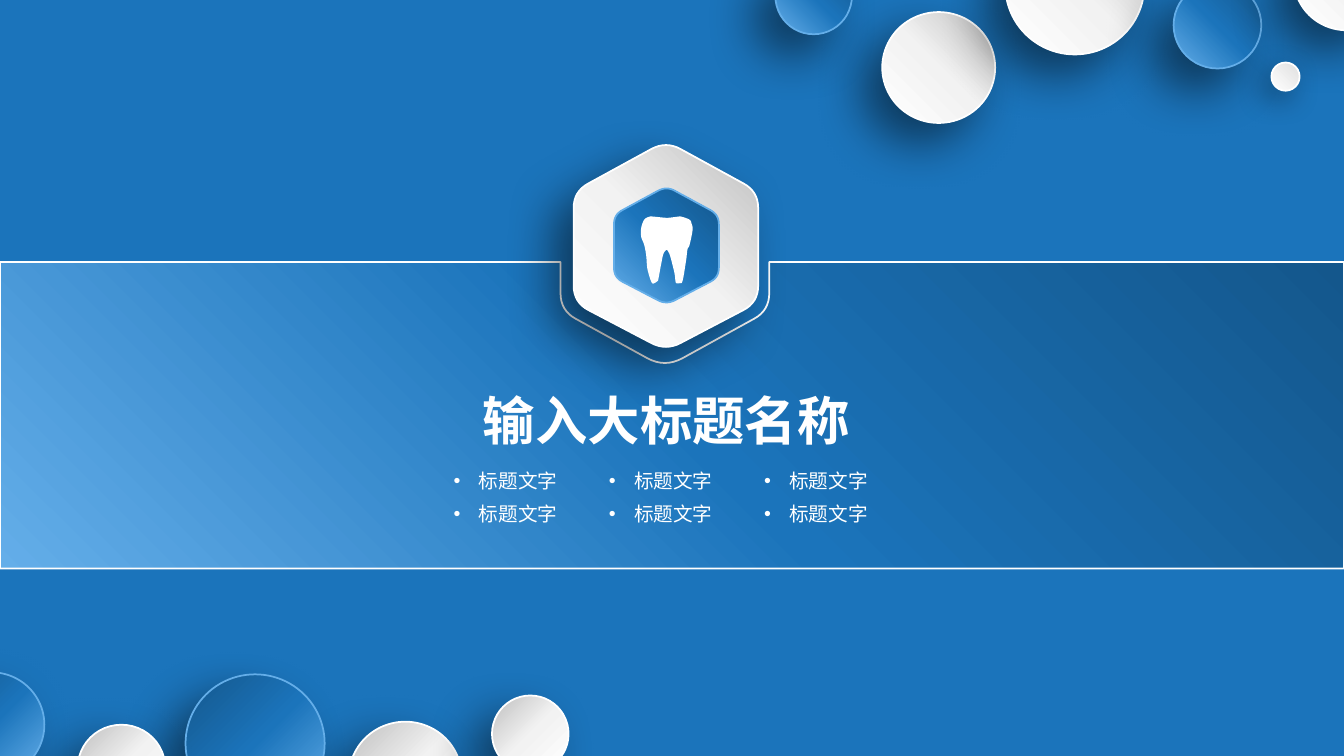
from dataclasses import dataclass

from lxml import etree
from pptx import Presentation
from pptx import util as u
from pptx.dml.color import RGBColor
from pptx.enum import shapes, text
from pptx.oxml import parse_xml
from pptx.oxml.ns import nsdecls, qn


@dataclass(frozen=True)
class Theme:
    font: str = "Arial"
    white: str = "FFFFFF"
    background: str = "1B74BB"
    edge_blue: str = "64AEE9"
    blue: tuple = ("64AEE9", "1B74BB", "14578C")
    silver: tuple = ("FFFFFF", "F2F2F2", "BFBFBF")
    pearl: tuple = ("FFFFFF", "E0E0E0")
    line_width: float = 1.25
    title_size: float = 37.4
    item_size: float = 14


THEME = Theme()
DEEP_SHADOW = (50, 35, 20)  # opacity %, blur pt, distance pt
BLUE_SHADOW = (50, 35, 22)
SMALL_SHADOW = (40, 22, 8)

# style: gradient colours, edge colour, shadow
STYLES = {
    "blue": (THEME.blue, THEME.edge_blue, BLUE_SHADOW),
    "silver": (THEME.silver, THEME.white, DEEP_SHADOW),
    "pearl": (THEME.pearl, THEME.white, SMALL_SHADOW),
    "band": (THEME.blue, THEME.white, None),
    "badge": (THEME.blue, THEME.edge_blue, None),
}

# Tooth outline, in inches from its top left corner
TOOTH = [
    (0.52, 0.13), (0.49, 0.28), (0.47, 0.32), (0.46, 0.40), (0.45, 0.47),
    (0.42, 0.64), (0.39, 0.66), (0.36, 0.66), (0.35, 0.64), (0.34, 0.56),
    (0.30, 0.40), (0.28, 0.35), (0.26, 0.33), (0.23, 0.37), (0.21, 0.46),
    (0.18, 0.62), (0.17, 0.64), (0.14, 0.66), (0.12, 0.66), (0.10, 0.62),
    (0.07, 0.51), (0.06, 0.39), (0.04, 0.28), (0.01, 0.20), (0.01, 0.11),
    (0.04, 0.03), (0.09, 0.00), (0.14, 0.00), (0.24, 0.01), (0.29, 0.01),
    (0.37, 0.00), (0.41, 0.00), (0.49, 0.03), (0.51, 0.07),
]


# ---- Geometry ----
def mix(start, end, t):
    return tuple(a + (b - a) * t for a, b in zip(start, end))


def round_corners(corners, steps=8):
    """Turn (x, y, setback) corners into an outline with rounded corners."""
    outline = []
    for i, (x, y, setback) in enumerate(corners):
        if not setback:
            outline.append((x, y))
            continue
        ends = []
        for near in (corners[i - 1], corners[(i + 1) % len(corners)]):
            length = ((near[0] - x) ** 2 + (near[1] - y) ** 2) ** 0.5
            ends.append(mix((x, y), near[:2], setback / length))
        for k in range(steps + 1):
            t = k / steps
            outline.append(mix(mix(ends[0], (x, y), t), mix((x, y), ends[1], t), t))
    return outline


def smooth(points, steps=4):
    """Closed Catmull-Rom curve through the points."""
    outline, count = [], len(points)
    for i in range(count):
        a, b, c, d = (points[(i + k) % count] for k in (-1, 0, 1, 2))
        for k in range(steps):
            t = k / steps
            outline.append(tuple(
                0.5 * (2 * q + (r - p) * t + (2 * p - 5 * q + 4 * r - s) * t ** 2
                       + (3 * q - p - 3 * r + s) * t ** 3)
                for p, q, r, s in zip(a, b, c, d)))
    return outline


def hexagon(left, top, width, height):
    setback = 0.09 * width
    relative = [(0.5, -0.02), (1, 0.23), (1, 0.78), (0.5, 1.02), (0, 0.78), (0, 0.23)]
    return round_corners([(left + x * width, top + y * height, setback) for x, y in relative])


# ---- Shape helpers ----
def apply_style(shape, style, angle=315):
    colours, edge, shadow = STYLES[style]
    shape.shadow.inherit = False
    shape.line.color.rgb = RGBColor.from_string(edge)
    shape.line.width = u.Pt(THEME.line_width)
    stops = "".join(
        f'<a:gs pos="{100000 * i // (len(colours) - 1)}"><a:srgbClr val="{colour}"/></a:gs>'
        for i, colour in enumerate(colours))
    properties = shape._element.spPr
    properties.find(qn("a:ln")).addprevious(parse_xml(
        f'<a:gradFill {nsdecls("a")} rotWithShape="1"><a:gsLst>{stops}</a:gsLst>'
        f'<a:lin ang="{angle * 60000}" scaled="0"/></a:gradFill>'))
    if shadow:
        opacity, blur, distance = shadow
        properties.find(qn("a:effectLst")).append(parse_xml(
            f'<a:outerShdw {nsdecls("a")} blurRad="{u.Pt(blur)}" dist="{u.Pt(distance)}" '
            f'dir="{135 * 60000}" algn="tr" rotWithShape="0"><a:srgbClr val="000000">'
            f'<a:alpha val="{opacity * 1000}"/></a:srgbClr></a:outerShdw>'))


def add_outline(slide, outline):
    points = [(u.Inches(x), u.Inches(y)) for x, y in outline]
    builder = slide.shapes.build_freeform(*points[0])
    builder.add_line_segments(points[1:], close=True)
    return builder.convert_to_shape()


def add_text(slide, box, content, size, bold=False, centred=False, bullet=False):
    frame = slide.shapes.add_textbox(*map(u.Inches, box)).text_frame
    frame.word_wrap = True
    paragraph = frame.paragraphs[0]
    if centred:
        frame.margin_left = frame.margin_right = 0
        paragraph.alignment = text.PP_ALIGN.CENTER
    if bullet:
        properties = paragraph._p.get_or_add_pPr()
        properties.set("marL", str(u.Inches(0.25)))
        properties.set("indent", str(u.Inches(-0.25)))
        etree.SubElement(properties, qn("a:buFont")).set("typeface", THEME.font)
        etree.SubElement(properties, qn("a:buChar")).set("char", "•")
    run = paragraph.add_run()
    run.text = content
    for name, value in {"name": THEME.font, "size": u.Pt(size), "bold": bold}.items():
        setattr(run.font, name, value)
    run.font.color.rgb = RGBColor.from_string(THEME.white)


# ---- Regions ----
def add_band(slide, left, top, width, height):
    right, bottom = left + width, top + height
    notch_left, notch_right = left + 5.56, left + 7.63
    apply_style(add_outline(slide, round_corners([
        (left, top, 0), (notch_left, top, 0), (notch_left, top + 0.48, 0.17),
        ((notch_left + notch_right) / 2, top + 1.05, 0.2),
        (notch_right, top + 0.48, 0.17), (notch_right, top, 0),
        (right, top, 0), (right, bottom, 0), (left, bottom, 0)])), "band")


def add_badge(slide, left, top, width, height):
    apply_style(add_outline(slide, hexagon(left, top, width, height)), "silver")
    apply_style(add_outline(slide, hexagon(left + 0.4, top + 0.43, 1.04, 1.13)), "badge")
    tooth = add_outline(slide, smooth([(left + 0.66 + x, top + 0.71 + y) for x, y in TOOTH]))
    tooth.shadow.inherit = False
    tooth.fill.solid()
    tooth.fill.fore_color.rgb = RGBColor.from_string(THEME.white)
    tooth.line.fill.background()


def add_headings(slide, left, top, width, height):
    add_text(slide, (left, top, width, 0.73), "输入大标题名称",
             THEME.title_size, bold=True, centred=True)
    for row in range(2):
        for column in range(3):
            box = (left + 1.35 + 1.54 * column, top + 0.8 + 0.33 * row, 1.92, 0.34)
            add_text(slide, box, "标题文字", THEME.item_size, bullet=True)


def add_bubbles(slide, left, top, bubbles, angle):
    for style, x, y, width, height in bubbles:
        box = map(u.Inches, (left + x, top + y, width, height))
        apply_style(slide.shapes.add_shape(shapes.MSO_SHAPE.OVAL, *box), style, angle)


def add_title_slide(presentation):
    slide = presentation.slides.add_slide(presentation.slide_layouts[6])
    slide.background.fill.solid()
    slide.background.fill.fore_color.rgb = RGBColor.from_string(THEME.background)
    add_band(slide, 0, 2.6, 13.33, 3.04)
    # Top right bubbles, then bottom left ones lit from the other side
    add_bubbles(slide, 7.69, 0, [
        ("silver", 1.06, 0.12, 1.12, 1.1), ("blue", 0, -0.42, 0.76, 0.76),
        ("silver", 2.28, -0.83, 1.38, 1.37), ("blue", 3.95, -0.18, 0.87, 0.86),
        ("silver", 5.14, -0.74, 1.05, 1.04), ("pearl", 4.92, 0.62, 0.28, 0.28)], 315)
    add_bubbles(slide, 0, 6.67, [
        ("silver", 3.46, 0.49, 1.12, 1.1), ("silver", 4.88, 0.23, 0.76, 0.76),
        ("blue", 1.84, 0.02, 1.38, 1.37), ("silver", 0.77, 0.52, 0.87, 0.86),
        ("blue", -0.61, 0, 1.05, 1.04)], 225)
    add_badge(slide, 5.69, 1.44, 1.83, 2)
    add_headings(slide, 3.05, 3.8, 7.12, 1.47)


def main():
    presentation = Presentation()
    presentation.slide_width = u.Inches(13.33)
    presentation.slide_height = u.Inches(7.5)
    add_title_slide(presentation)
    presentation.save("out.pptx")


if __name__ == "__main__":
    main()
